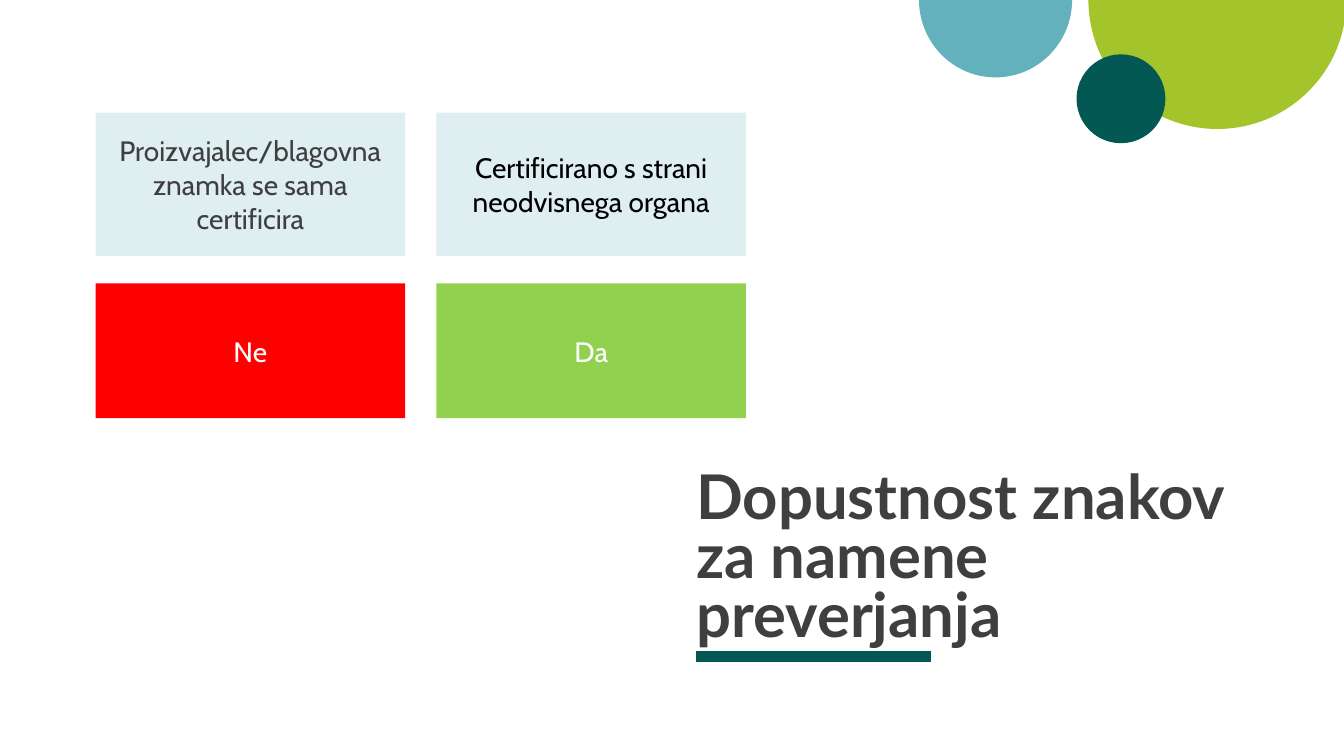
import pptx
import pptx.util
from lxml import etree
from pptx.dml.color import RGBColor
from pptx.enum.shapes import MSO_CONNECTOR, MSO_SHAPE
from pptx.enum.text import MSO_ANCHOR, PP_ALIGN
from pptx.oxml.ns import qn
from pptx.util import Cm, Pt

# Colours
TEAL = RGBColor(0x03, 0x58, 0x54)
LIME = RGBColor(0xA3, 0xC4, 0x2A)
BLUE = RGBColor(0x64, 0xB1, 0xBE)
PALE_BLUE = RGBColor(0xCA, 0xE4, 0xE9)
RED = RGBColor(0xFF, 0x00, 0x00)
GREEN = RGBColor(0x92, 0xD0, 0x50)
GREY = RGBColor(0x3F, 0x3F, 0x3F)
BLACK = RGBColor(0x00, 0x00, 0x00)
WHITE = RGBColor(0xFF, 0xFF, 0xFF)

# Content
TITLE = "Dopustnost znakov za namene preverjanja"
CARD_ROWS = [
    # top, height, opacity in percent, cards as (lines, fill, text colour)
    (2.84, 3.61, 62, [
        (["Proizvajalec/blagovna znamka se sama certificira"], PALE_BLUE, GREY),
        (["Certificirano s strani", "neodvisnega organa"], PALE_BLUE, BLACK),
    ]),
    (7.14, 3.4, 100, [
        (["Ne"], RED, WHITE),
        (["Da"], GREEN, WHITE),
    ]),
]
CIRCLES = [
    # preset, left, top, width, height, fill
    (MSO_SHAPE.PIE, 27.43, -3.25, 6.5, 6.5, LIME),
    (MSO_SHAPE.PIE, 23.16, -1.96, 3.86, 3.91, BLUE),
    (MSO_SHAPE.OVAL, 27.13, 1.37, 2.24, 2.24, TEAL),
]

# Layout and formats
CARD_LEFT, CARD_WIDTH, CARD_STEP = 2.41, 7.8, 8.59
TITLE_LEFT, RULE_TOP, RULE_LENGTH = 17.55, 16.54, 5.92
HALF_TURN = 108  # 180 degrees in shape adjustment units
CARD_FONT = {"name": "Cabin", "size": Pt(20)}
TITLE_FONT = {"name": "Lato", "size": Pt(44), "bold": True}
TITLE_FRAME = {"word_wrap": True, "vertical_anchor": MSO_ANCHOR.BOTTOM,
               "margin_left": 0, "margin_right": 0,
               "margin_top": 0, "margin_bottom": 0}
CARD_FRAME = {"word_wrap": True, "vertical_anchor": MSO_ANCHOR.MIDDLE}


def apply_format(target, values):
    for name, value in values.items():
        setattr(target, name, value)


def add_filled_shape(slide, preset, box, fill):
    shape = slide.shapes.add_shape(preset, *(Cm(length) for length in box))
    shape.shadow.inherit = False
    shape.fill.solid()
    shape.fill.fore_color.rgb = fill
    shape.line.fill.background()
    return shape


def write_lines(text_frame, lines, frame_format, paragraph_format, font, colour):
    apply_format(text_frame, frame_format)
    text_frame.text = "\n".join(lines)
    for paragraph in text_frame.paragraphs:
        apply_format(paragraph, paragraph_format)
        apply_format(paragraph.runs[0].font, font)
        paragraph.runs[0].font.color.rgb = colour


def set_opacity(shape, percent):
    colour = shape.fill._xPr.find(qn("a:solidFill"))[0]
    etree.SubElement(colour, qn("a:alpha")).set("val", str(percent * 1000))


def main():
    presentation = pptx.Presentation()
    presentation.slide_width, presentation.slide_height = Cm(33.87), Cm(19.05)
    slide = presentation.slides.add_slide(presentation.slide_layouts[6])

    # Rule under the title
    rule = slide.shapes.add_connector(
        MSO_CONNECTOR.STRAIGHT, Cm(TITLE_LEFT), Cm(RULE_TOP),
        Cm(TITLE_LEFT + RULE_LENGTH), Cm(RULE_TOP))
    rule.line.color.rgb = TEAL
    rule.line.width = Pt(8)
    etree.SubElement(rule._element.spPr, qn("a:effectLst"))

    # Corner circles, the larger two cut at the slide edge
    for preset, *box, fill in CIRCLES:
        circle = add_filled_shape(slide, preset, box, fill)
        if preset == MSO_SHAPE.PIE:
            circle.adjustments[0] = 0
            circle.adjustments[1] = HALF_TURN

    # Title
    title = slide.shapes.add_textbox(Cm(TITLE_LEFT), Cm(12.52), Cm(14.66), Cm(3.84))
    write_lines(title.text_frame, [TITLE], TITLE_FRAME,
                {"line_spacing": 0.8}, TITLE_FONT, GREY)

    # Cards
    for top, height, opacity, cards in CARD_ROWS:
        for column, (lines, fill, colour) in enumerate(cards):
            box = (CARD_LEFT + column * CARD_STEP, top, CARD_WIDTH, height)
            card = add_filled_shape(slide, MSO_SHAPE.RECTANGLE, box, fill)
            if opacity < 100:
                set_opacity(card, opacity)
            write_lines(card.text_frame, lines, CARD_FRAME,
                        {"alignment": PP_ALIGN.CENTER}, CARD_FONT, colour)

    presentation.save("out.pptx")


if __name__ == "__main__":
    main()
